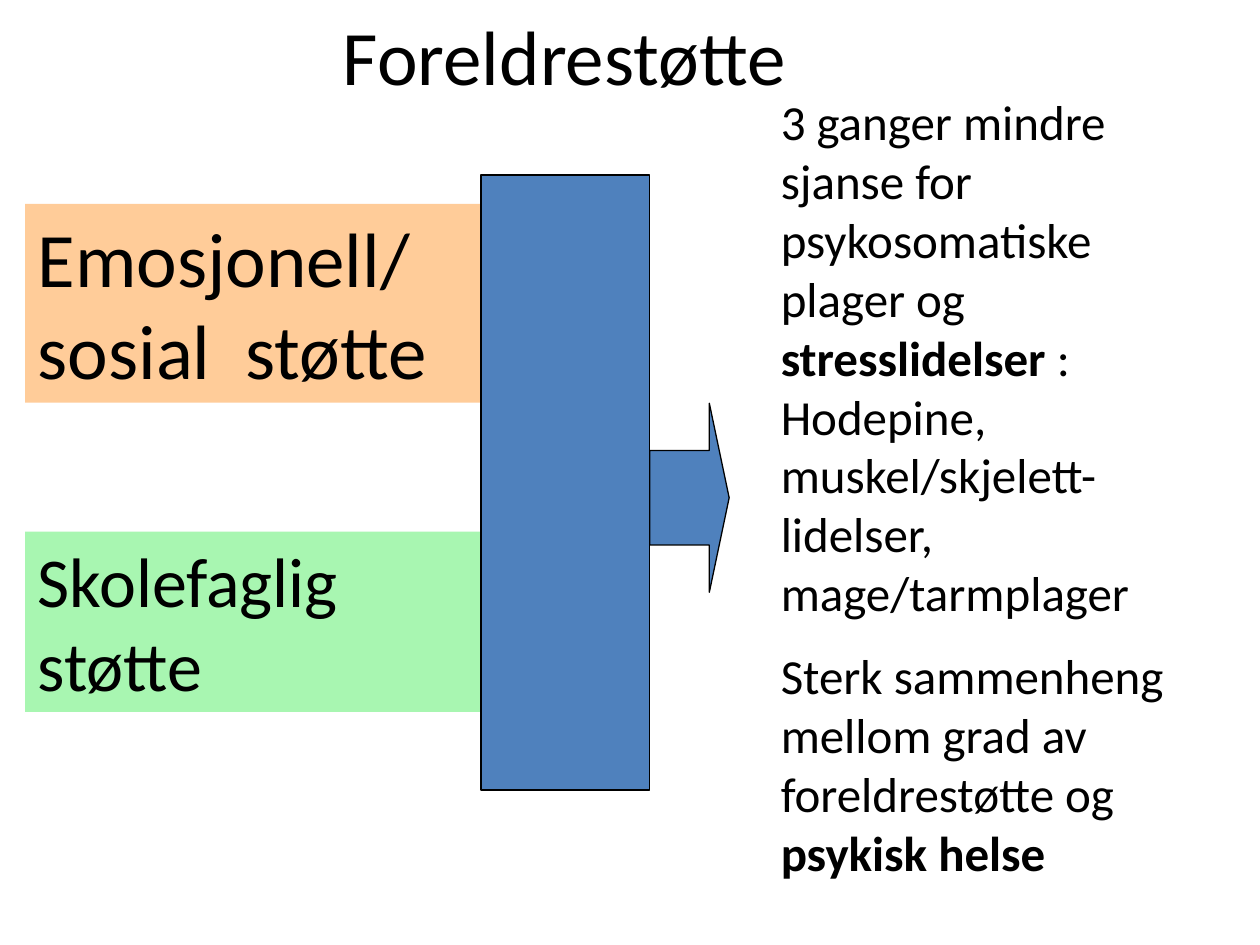
from pptx import Presentation
from pptx import util as u
from pptx.dml.color import RGBColor
from pptx.enum import shapes, text

COLORS = {
    "ink": "000000",
    "emotional": "FFCC99",
    "academic": "A8F6B1",
    "flow": "4F81BD",
}
FONT = "Calibri"


def add_span(para, content, size=28, bold=False, color="ink"):
    span = para.add_run()
    span.text = content
    span.font.name = FONT
    span.font.size = u.Pt(size)
    span.font.bold = bold
    span.font.color.rgb = RGBColor.from_string(COLORS[color])


class SlideBuilder:
    def __init__(self, slide):
        self.slide = slide

    def title(self, content, left, top, width, height):
        box = self.slide.shapes.title
        box.left, box.top, box.width, box.height = map(u.Cm, (left, top, width, height))
        box.text_frame.vertical_anchor = text.MSO_ANCHOR.MIDDLE
        para = box.text_frame.paragraphs[0]
        para.alignment = text.PP_ALIGN.CENTER
        add_span(para, content, size=44)

    def block(self, kind, fill, left, top, width, height, outlined=False):
        shape = self.slide.shapes.add_shape(kind, *map(u.Cm, (left, top, width, height)))
        shape.shadow.inherit = False
        shape.fill.solid()
        shape.fill.fore_color.rgb = RGBColor.from_string(COLORS[fill])
        if outlined:
            shape.line.color.rgb = RGBColor.from_string(COLORS["ink"])
            shape.line.width = u.Pt(0.75)
        else:
            shape.line.fill.background()
        return shape

    def support(self, content, fill, size, left, top, width, height):
        shape = self.block(shapes.MSO_SHAPE.RECTANGLE, fill, left, top, width, height)
        frame = shape.text_frame
        frame.word_wrap = True
        frame.vertical_anchor = text.MSO_ANCHOR.TOP
        para = frame.paragraphs[0]
        para.alignment = text.PP_ALIGN.LEFT
        add_span(para, content, size=size)

    def findings(self, paragraphs, left, top, width, height):
        box = self.slide.shapes.add_textbox(*map(u.Cm, (left, top, width, height)))
        frame = box.text_frame
        frame.word_wrap = True
        for index, spans in enumerate(paragraphs):
            para = frame.add_paragraph() if index else frame.paragraphs[0]
            para.space_before = u.Pt(14 if index else 0)
            for content, bold in spans:
                add_span(para, content, bold=bold)


def main():
    deck = Presentation()
    deck.slide_width, deck.slide_height = u.Cm(25.4), u.Cm(19.05)
    page = SlideBuilder(deck.slides.add_slide(deck.slide_layouts[5]))

    page.title("Foreldrestøtte", -0.05, -0.48, 22.86, 3.18)
    page.support("Emosjonell/ sosial  støtte", "emotional", 44, 0.51, 4.11, 9.19, 4.01)
    page.support("Skolefaglig støtte", "academic", 40, 0.51, 10.72, 9.4, 3.63)
    page.block(shapes.MSO_SHAPE.RECTANGLE, "flow", 9.7, 3.53, 3.4, 12.4, outlined=True)
    arrow = page.block(
        shapes.MSO_SHAPE.RIGHT_ARROW, "flow", 13.1, 8.13, 1.6, 3.81, outlined=True
    )
    arrow.adjustments[0], arrow.adjustments[1] = 0.5, 0.25
    page.findings(
        [
            [
                ("3 ganger mindre sjanse for psykosomatiske plager og ", False),
                ("stresslidelser ", True),
                (": Hodepine, muskel/skjelett-lidelser, mage/tarmplager", False),
            ],
            [
                ("Sterk sammenheng mellom grad av foreldrestøtte og ", False),
                ("psykisk helse", True),
            ],
        ],
        15.49, 1.73, 8.41, 16.41,
    )
    deck.save("out.pptx")


if __name__ == "__main__":
    main()
